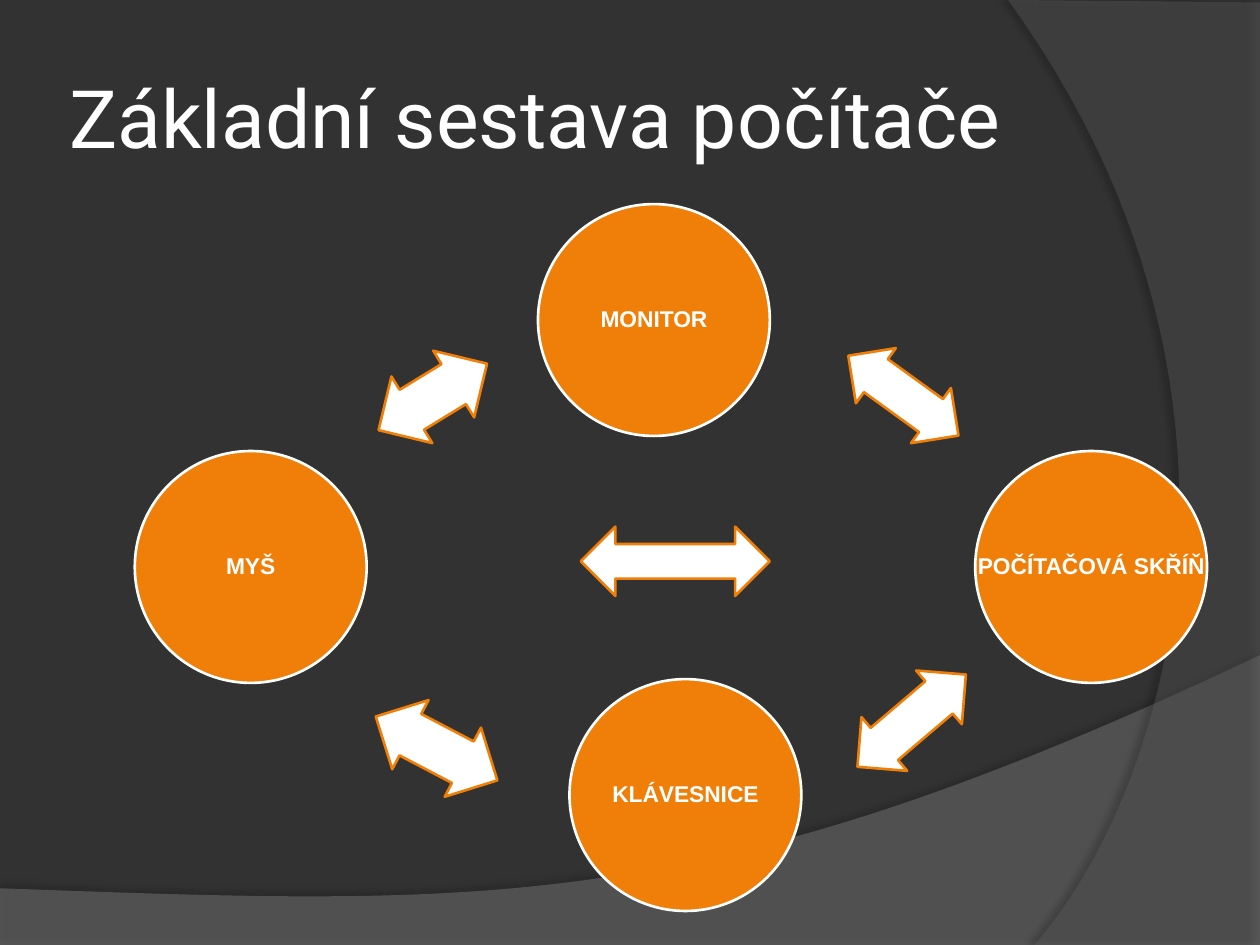
import pptx
import pptx.util
import pptx.dml.color
import pptx.enum.shapes
import pptx.enum.text
import pptx.oxml
import pptx.oxml.ns

Inches, Pt = pptx.util.Inches, pptx.util.Pt
RGB = pptx.dml.color.RGBColor
SHAPE = pptx.enum.shapes.MSO_SHAPE
ALIGN = pptx.enum.text.PP_ALIGN
ANCHOR = pptx.enum.text.MSO_ANCHOR

DARK = RGB(0x32, 0x32, 0x32)
GREY = RGB(0x7F, 0x7F, 0x7F)
SLATE = RGB(0x5E, 0x5E, 0x5E)
ORANGE = RGB(0xF0, 0x7F, 0x09)
WHITE = RGB(0xFF, 0xFF, 0xFF)

SIZE = 1.84  # diameter of a circle

# Label, left, top
PARTS = [
    ("MONITOR", 4.27, 1.62),
    ("POČÍTAČOVÁ SKŘÍŇ", 7.74, 3.58),
    ("KLÁVESNICE", 4.52, 5.39),
    ("MYŠ", 1.07, 3.58),
]

# Left, top, width, height, rotation, shaft share
ARROWS = [
    (6.63, 2.87, 1.08, 0.54, 35.9, 0.6),
    (6.67, 5.44, 1.13, 0.56, 139.6, 0.6),
    (2.92, 5.63, 1.09, 0.62, 207.7, 0.6),
    (2.93, 2.84, 1.01, 0.62, 328.5, 0.6),
    (4.61, 4.18, 1.5, 0.55, 0, 0.5),
]


def curve(start, one, two, end, steps=48):
    """Points along a cubic curve, start included."""
    spots = []
    for i in range(steps + 1):
        t = i / steps
        u = 1 - t
        spots.append(tuple(
            u**3 * a + 3 * u * u * t * b + 3 * u * t * t * c + t**3 * d
            for a, b, c, d in zip(start, one, two, end)))
    return spots


def paint(shape, fill, line=None):
    shape.shadow.inherit = False
    shape.fill.solid()
    shape.fill.fore_color.rgb = fill
    if line is None:
        shape.line.fill.background()
    else:
        shape.line.color.rgb = line
        shape.line.width = Pt(1.5)


def write(shape, text, size, font, inset, bold=False, align=ALIGN.LEFT,
          wrap=True, space=1.0):
    frame = shape.text_frame
    frame.word_wrap = wrap
    frame.vertical_anchor = ANCHOR.MIDDLE
    frame.margin_left = frame.margin_right = Inches(inset)
    frame.margin_top = frame.margin_bottom = Inches(inset)
    para = frame.paragraphs[0]
    para.alignment = align
    para.line_spacing = space
    run = para.add_run()
    run.text = text
    run.font.size = Pt(size)
    run.font.name = font
    run.font.bold = bold
    run.font.color.rgb = WHITE


def add_wave(slide, spots, fill, alpha, shade, dist, angle):
    """Translucent backdrop shape with a soft shadow."""
    pen = slide.shapes.build_freeform(
        *(Inches(v) for v in spots[0]), scale=1.0)
    pen.add_line_segments([(Inches(x), Inches(y)) for x, y in spots[1:]])
    wave = pen.convert_to_shape()
    paint(wave, fill)
    props = wave.fill._xPr
    tint = props.find(".//" + pptx.oxml.ns.qn("a:srgbClr"))
    space = pptx.oxml.ns.nsdecls("a")
    tint.append(pptx.oxml.parse_xml(f'<a:alpha {space} val="{alpha * 1000}"/>'))
    glow = props.find(pptx.oxml.ns.qn("a:effectLst"))
    glow.append(pptx.oxml.parse_xml(
        f'<a:outerShdw {space} blurRad="{Pt(4)}" dist="{Pt(dist)}" '
        f'dir="{angle * 60000}" algn="ctr" rotWithShape="0">'
        f'<a:srgbClr val="000000"><a:alpha val="{shade * 1000}"/></a:srgbClr>'
        '</a:outerShdw>'))


def add_part(slide, text, left, top):
    disc = slide.shapes.add_shape(
        SHAPE.OVAL, Inches(left), Inches(top), Inches(SIZE), Inches(SIZE))
    paint(disc, ORANGE, WHITE)
    write(disc, text, 13, "Arial", 0.02, bold=True, align=ALIGN.CENTER,
          wrap=False, space=0.9)


def add_arrow(slide, left, top, width, height, turn, shaft):
    arrow = slide.shapes.add_shape(
        SHAPE.LEFT_RIGHT_ARROW, Inches(left), Inches(top),
        Inches(width), Inches(height))
    arrow.adjustments[0] = shaft
    arrow.rotation = turn
    paint(arrow, WHITE, ORANGE)


def main():
    deck = pptx.Presentation()
    deck.slide_width, deck.slide_height = Inches(10), Inches(7.5)
    slide = deck.slides.add_slide(deck.slide_layouts[6])

    # Backdrop
    slide.background.fill.solid()
    slide.background.fill.fore_color.rgb = DARK
    low = [(0, 7.51), (10, 7.51)]
    low += curve((10, 5.2), (5.59, 7.29), (3.91, 7.19), (0, 7.05))
    add_wave(slide, low, GREY, 45, 35, 3.5, 270)
    side = [(10, 0.02), (10, 7.5)]
    side += curve((8.21, 7.5), (9.35, 6.19), (10.18, 3), (8, 0))
    add_wave(slide, side, SLATE, 40, 45, 4, 180)

    # Title
    title = slide.shapes.add_textbox(
        Inches(0.5), Inches(0.3), Inches(8.17), Inches(1.25))
    write(title, "Základní sestava počítače", 46, "Roboto", 0.05)

    # Computer parts and the arrows between them
    for part in PARTS:
        add_part(slide, *part)
    for arrow in ARROWS:
        add_arrow(slide, *arrow)

    deck.save("out.pptx")


if __name__ == "__main__":
    main()
